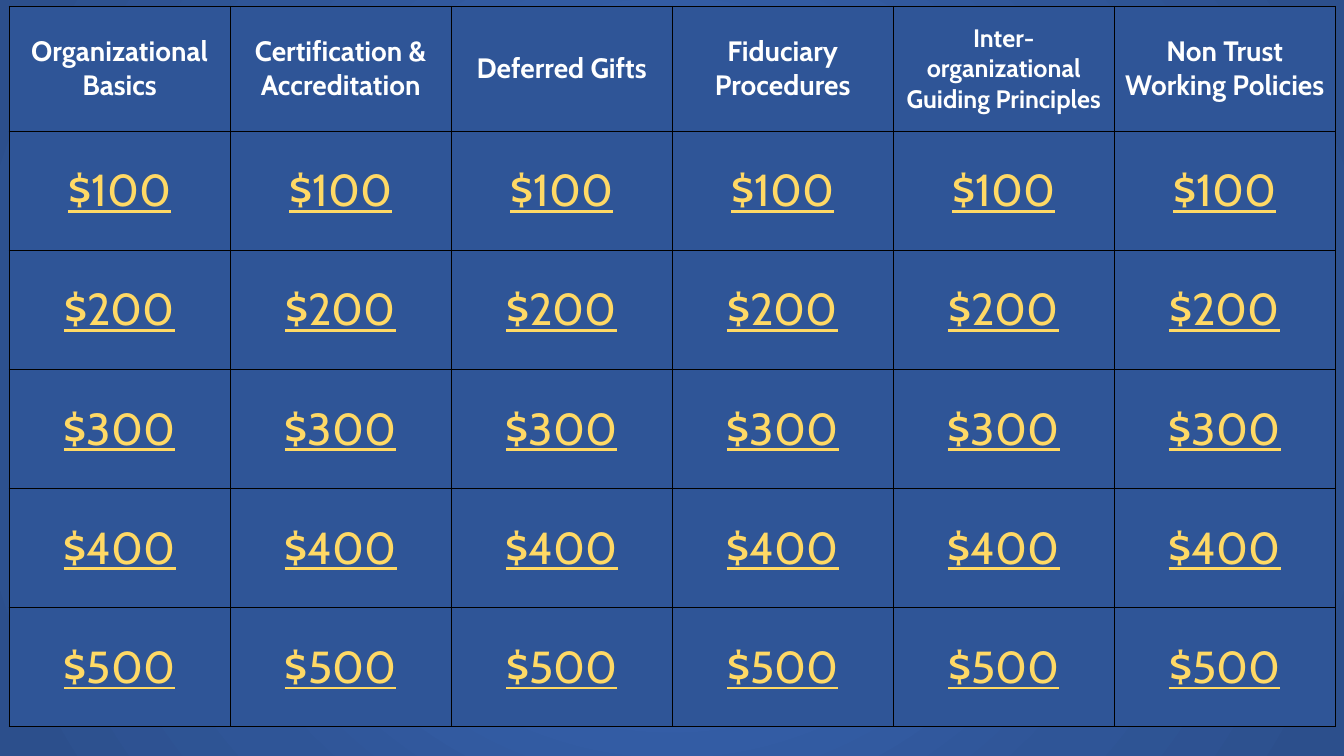
"""Build a quiz board slide: six categories, five prize rows."""
from lxml import etree
from pptx import Presentation
from pptx.dml.color import RGBColor
from pptx.enum import text
from pptx.oxml import ns, parse_xml
from pptx.util import Cm, Pt

BOARD_BLUE = RGBColor(0x2F, 0x55, 0x97)
GLOW_BLUE = RGBColor(0x38, 0x64, 0xB3)
EDGE_BLUE = RGBColor(0x2C, 0x4F, 0x8C)
PRIZE_YELLOW = RGBColor(0xFF, 0xD9, 0x65)
WHITE = RGBColor(0xFF, 0xFF, 0xFF)
BLACK = RGBColor(0x00, 0x00, 0x00)

FONT = "Cabin"
CATEGORIES = [
    ("Organizational Basics", 20),
    ("Certification & Accreditation", 20),
    ("Deferred Gifts", 20),
    ("Fiduciary Procedures", 20),
    ("Inter-organizational Guiding Principles", 18),
    ("Non Trust Working Policies", 20),
]
PRIZES = range(100, 501, 100)
GLOW_STOPS = [(0, GLOW_BLUE), (23, GLOW_BLUE), (69, BOARD_BLUE), (97, EDGE_BLUE)]
COLUMN_WIDTH = Cm(5.57)
HEADER_HEIGHT = Cm(3.15)
PRIZE_HEIGHT = Cm(3)


def set_glow_background(slide):
    """Fill the background with a circular gradient from the centre."""
    slide.background.fill.gradient()
    stops = "".join(
        f'<a:gs pos="{percent * 1000}"><a:srgbClr val="{color}"/></a:gs>'
        for percent, color in GLOW_STOPS
    )
    gradient = parse_xml(
        f'<a:gradFill {ns.nsdecls("a")} rotWithShape="1"><a:gsLst>{stops}</a:gsLst>'
        '<a:path path="circle"><a:fillToRect l="50000" t="50000" r="50000" b="50000"/>'
        "</a:path></a:gradFill>"
    )
    linear = slide.element.find(f".//{ns.qn('p:bgPr')}/{ns.qn('a:gradFill')}")
    linear.getparent().replace(linear, gradient)


def add_borders(cell):
    """Draw a thin black line on all four sides of a cell."""
    properties = cell._tc.get_or_add_tcPr()
    for position, side in enumerate(("lnL", "lnR", "lnT", "lnB")):
        line = etree.Element(ns.qn(f"a:{side}"), w=str(Pt(1)))
        fill = etree.SubElement(line, ns.qn("a:solidFill"))
        etree.SubElement(fill, ns.qn("a:srgbClr"), val=str(BLACK))
        properties.insert(position, line)


def fill_cell(cell, wording, size, color, bold=False, underline=False):
    """Write centred text into a bordered blue cell."""
    cell.fill.solid()
    cell.fill.fore_color.rgb = BOARD_BLUE
    add_borders(cell)
    cell.vertical_anchor = text.MSO_ANCHOR.MIDDLE
    cell.text = wording
    paragraph = cell.text_frame.paragraphs[0]
    paragraph.alignment = text.PP_ALIGN.CENTER
    font = paragraph.font
    font.name = FONT
    font.size = Pt(size)
    font.bold = bold
    font.underline = underline
    font.color.rgb = color


def add_board(slide):
    """Add the table of categories and prizes."""
    columns, prize_rows = len(CATEGORIES), len(PRIZES)
    board = slide.shapes.add_table(
        prize_rows + 1, columns, Cm(0.23), Cm(0.16),
        COLUMN_WIDTH * columns, HEADER_HEIGHT + PRIZE_HEIGHT * prize_rows,
    ).table
    board.rows[0].height = HEADER_HEIGHT
    for row in range(1, prize_rows + 1):
        board.rows[row].height = PRIZE_HEIGHT
    for column, (category, size) in enumerate(CATEGORIES):
        board.columns[column].width = COLUMN_WIDTH
        fill_cell(board.cell(0, column), category, size, WHITE, bold=True)
        for row, prize in enumerate(PRIZES, start=1):
            fill_cell(board.cell(row, column), f"${prize}", 32, PRIZE_YELLOW, underline=True)


def main():
    """Create the presentation and save it."""
    presentation = Presentation()
    presentation.slide_width = Cm(33.87)
    presentation.slide_height = Cm(19.05)
    slide = presentation.slides.add_slide(presentation.slide_layouts[6])
    set_glow_background(slide)
    add_board(slide)
    presentation.save("out.pptx")


if __name__ == "__main__":
    main()
